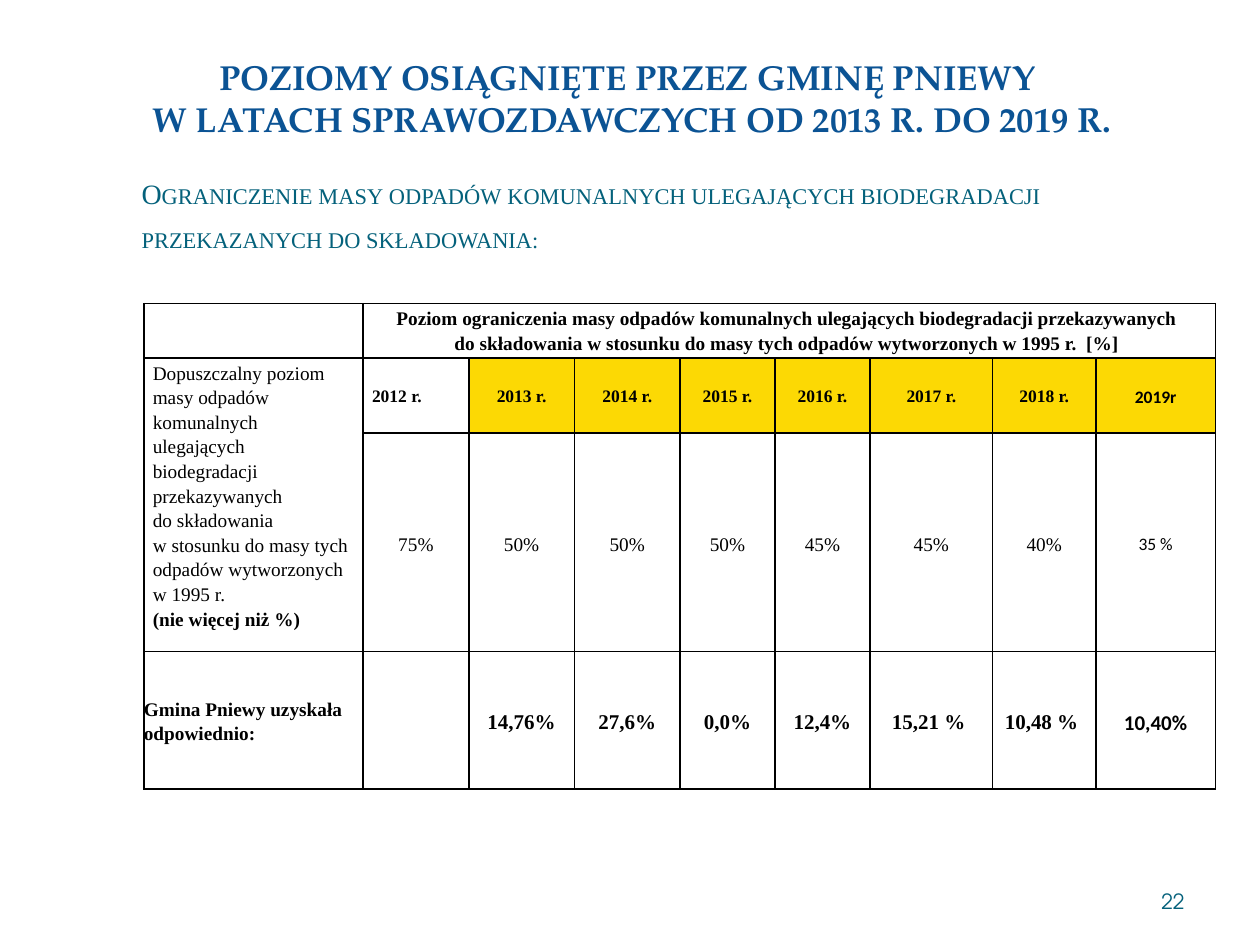
from lxml import etree
from pptx import Presentation
from pptx import util as u
from pptx.dml.color import RGBColor
from pptx.enum import shapes, text
from pptx.oxml import ns

HUES = {"title": "0B5394", "teal": "04617B", "ink": "000000", "mark": "FCD904",
        "paper": "FFFFFF"}
SERIF, SANS = "Times New Roman", "Calibri"
LEFT, MID, RIGHT = text.PP_ALIGN.LEFT, text.PP_ALIGN.CENTER, text.PP_ALIGN.RIGHT

COLS = [4.42, 2.13, 2.13, 2.13, 1.91, 1.92, 2.47, 2.08, 2.41]
ROWS = [1.09, 1.3, 2.21, 2.77]  # the middle rows grow with their text
YEARS = [f"{year} r." for year in range(2012, 2019)] + ["2019r"]
LIMITS = ["75%", "50%", "50%", "50%", "45%", "45%", "40%", "35 %"]
RESULTS = ["", "14,76%", "27,6%", "0,0%", "12,4%", "15,21 % ", "10,48 % ", "10,40%"]
HEAD = [
    "Poziom ograniczenia masy odpadów komunalnych ulegających biodegradacji przekazywanych ",
    "do składowania w stosunku do masy tych odpadów wytworzonych w 1995 r.  [%] ",
]
RULE = [
    "Dopuszczalny poziom masy odpadów komunalnych ulegających biodegradacji przekazywanych ",
    "do składowania ",
    "w stosunku do masy tych odpadów wytworzonych ",
    "w 1995 r.",
]


def place(shape, left, top, width, height):
    shape.left, shape.top = u.Cm(left), u.Cm(top)
    shape.width, shape.height = u.Cm(width), u.Cm(height)


def add_panels(slide):
    """White panels behind the title and the content."""
    kinds = shapes.MSO_SHAPE
    tree = slide.shapes._spTree
    panels = [(kinds.ROUNDED_RECTANGLE, 0.25, 0.28, 24.89, 18.52, 100),
              (kinds.RECTANGLE, 0.76, 0.76, 23.88, 3.68, 83),
              (kinds.RECTANGLE, 1.04, 1.04, 23.29, 3.1, 100)]
    for i, (kind, left, top, width, height, alpha) in enumerate(panels):
        panel = slide.shapes.add_shape(kind, u.Cm(left), u.Cm(top), u.Cm(width), u.Cm(height))
        panel.shadow.inherit = False
        panel.line.fill.background()
        panel.fill.solid()
        panel.fill.fore_color.rgb = RGBColor.from_string(HUES["paper"])
        if kind == kinds.ROUNDED_RECTANGLE:
            panel.adjustments[0] = 0.02
        if alpha < 100:
            color = panel._element.spPr.find(".//" + ns.qn("a:srgbClr"))
            etree.SubElement(color, ns.qn("a:alpha"), val=str(alpha * 1000))
        tree.insert(2 + i, panel._element)


def add_para(frame, lines, size, font=SERIF, hue="ink", bold=False, align=LEFT, space=1.0):
    """Fill the first empty paragraph or add one; lines are split by breaks."""
    para = frame.paragraphs[-1]
    if para.runs:
        para = frame.add_paragraph()
    para.alignment, para.line_spacing = align, space
    for i, line in enumerate(lines):
        if i:
            para.add_line_break()
        run = para.add_run()
        run.text = line
        run.font.size, run.font.name, run.font.bold = u.Pt(size), font, bold
        run.font.color.rgb = RGBColor.from_string(HUES[hue])
    return para


def add_title(slide):
    title = slide.shapes.title
    place(title, 2.29, 1.02, 20.88, 1.9)
    frame = title.text_frame
    frame.auto_size = text.MSO_AUTO_SIZE.NONE
    frame.vertical_anchor = text.MSO_ANCHOR.MIDDLE
    lines = ["POZIOMY OSIĄGNIĘTE PRZEZ GMINĘ PNIEWY ",
             "W LATACH SPRAWOZDAWCZYCH OD 2013 R. DO 2019 R."]
    add_para(frame, lines, 19.8, "TeX Gyre Pagella", "title", True, MID)


def add_body(slide):
    body = slide.placeholders[1]
    place(body, 2.29, 3.33, 20.88, 14.81)
    frame = body.text_frame
    frame.auto_size = text.MSO_AUTO_SIZE.NONE
    for line in ["Ograniczenie masy odpadów komunalnych ulegających biodegradacji",
                 "przekazanych do składowania:"]:
        para = add_para(frame, [line], 16, hue="teal", space=1.15)
        para.space_before = u.Pt(3.2)
        # Indent without bullet, small capitals
        props = para._p.get_or_add_pPr()
        props.set("marL", str(u.Cm(0.31)))
        props.set("indent", "0")
        etree.SubElement(props, ns.qn("a:buNone"))
        for run in para.runs:
            run.font._element.set("cap", "small")


def add_page(slide):
    box = slide.shapes.add_textbox(u.Cm(18.21), u.Cm(17.65), u.Cm(5.92), u.Cm(1.02))
    frame = box.text_frame
    frame.word_wrap = True
    frame.vertical_anchor = text.MSO_ANCHOR.MIDDLE
    add_para(frame, ["22"], 12, "TeX Gyre Adventor", "teal", align=RIGHT)


def add_edges(cell):
    props = cell._tc.get_or_add_tcPr()
    for i, side in enumerate(["lnL", "lnR", "lnT", "lnB"]):
        line = etree.Element(ns.qn(f"a:{side}"), w=str(u.Pt(1)))
        fill = etree.SubElement(line, ns.qn("a:solidFill"))
        etree.SubElement(fill, ns.qn("a:srgbClr"), val=HUES["ink"])
        props.insert(i, line)


def style_cell(cell):
    cell.margin_left = cell.margin_right = u.Cm(0.18)
    cell.margin_top, cell.margin_bottom = u.Cm(0.03), 0
    cell.vertical_anchor = text.MSO_ANCHOR.MIDDLE
    cell.fill.background()
    add_edges(cell)


def fill_cell(cell, lines, size=11, **look):
    add_para(cell.text_frame, lines, size, space=1.15, **look)


def add_grid(slide):
    frame = slide.shapes.add_table(len(ROWS), len(COLS), u.Cm(2.9), u.Cm(6.12),
                                   u.Cm(sum(COLS)), u.Cm(sum(ROWS)))
    grid = frame.table
    grid.first_row = grid.horz_banding = False
    for col, width in zip(grid.columns, COLS):
        col.width = u.Cm(width)
    for row, height in zip(grid.rows, ROWS):
        row.height = u.Cm(height)
    for cell in grid.iter_cells():
        style_cell(cell)

    # Heading and row labels
    head, rule, label = grid.cell(0, 1), grid.cell(1, 0), grid.cell(3, 0)
    head.merge(grid.cell(0, 8))
    rule.merge(grid.cell(2, 0))
    head.vertical_anchor = rule.vertical_anchor = text.MSO_ANCHOR.TOP
    for line in HEAD:
        fill_cell(head, [line], bold=True, align=MID)
    fill_cell(rule, RULE)
    fill_cell(rule, ["(nie więcej niż %)"], bold=True)
    label.margin_left = label.margin_right = label.margin_top = 0
    fill_cell(label, ["Gmina Pniewy uzyskała odpowiednio:"], bold=True)

    # Years, limits and results
    for i, (year, limit, result) in enumerate(zip(YEARS, LIMITS, RESULTS), 1):
        last = i == len(YEARS)
        font = SANS if last else SERIF
        top = grid.cell(1, i)
        top.margin_top = top.margin_bottom = u.Cm(0.51)
        fill_cell(top, [year], 10, font=font, bold=True,
                  align=MID if i > 1 else text.PP_ALIGN.JUSTIFY)
        if i > 1:
            top.fill.solid()
            top.fill.fore_color.rgb = RGBColor.from_string(HUES["mark"])
        fill_cell(grid.cell(2, i), [limit], 10 if last else 11, font=font, align=MID)
        if result:
            fill_cell(grid.cell(3, i), [result], 12, font=font, bold=True, align=MID)


def main():
    deck = Presentation()
    deck.slide_width, deck.slide_height = u.Cm(25.4), u.Cm(19.05)
    slide = deck.slides.add_slide(deck.slide_layouts[1])
    add_panels(slide)
    add_title(slide)
    add_body(slide)
    add_page(slide)
    add_grid(slide)
    deck.save("out.pptx")


if __name__ == "__main__":
    main()
